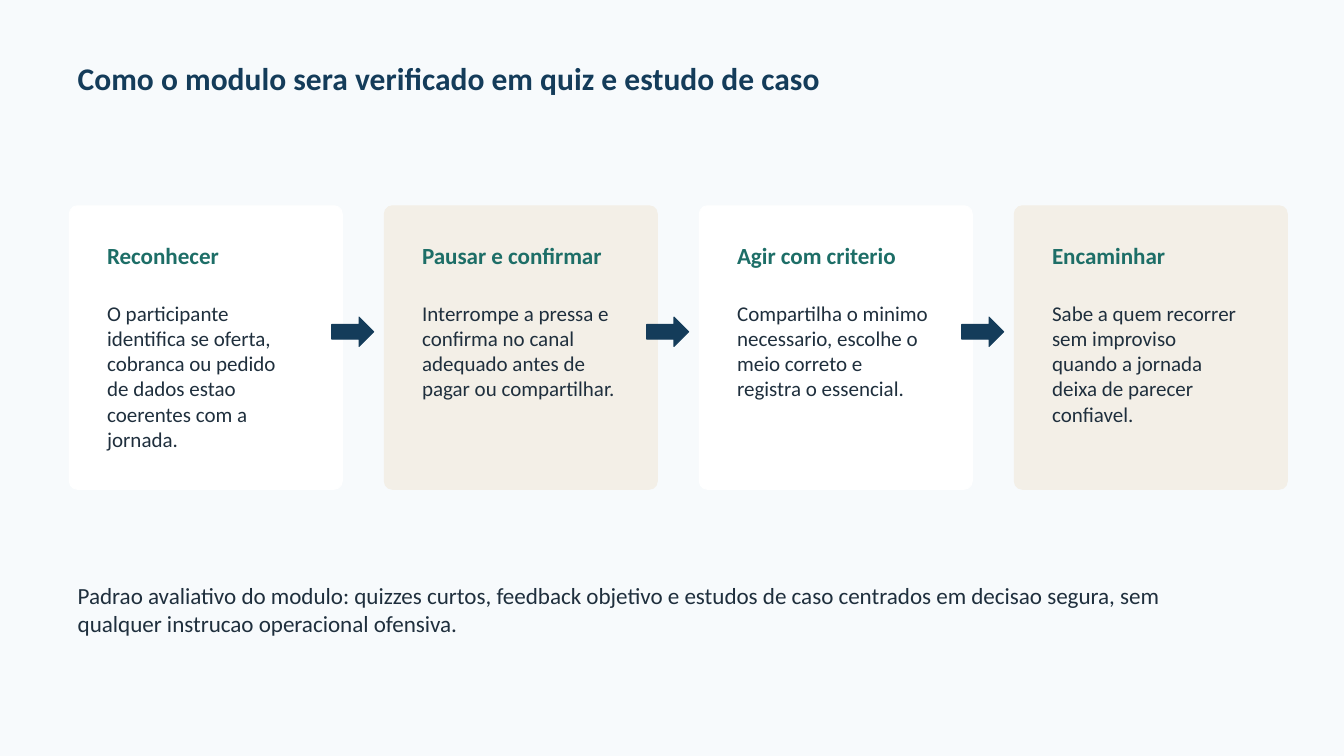
"""Build the slide on how the module is checked by quiz and case study."""
from pptx import Presentation
from pptx.dml.color import RGBColor as Rgb
from pptx.enum.shapes import MSO_SHAPE as Kind
from pptx.enum.text import MSO_ANCHOR as Anchor, MSO_AUTO_SIZE as Fit, PP_ALIGN as Align
from pptx.util import Pt

TITLE = "Como o modulo sera verificado em quiz e estudo de caso"
STEPS = [
    ("Reconhecer", "O participante identifica se oferta, cobranca ou pedido "
                   "de dados estao coerentes com a jornada."),
    ("Pausar e confirmar", "Interrompe a pressa e confirma no canal adequado "
                           "antes de pagar ou compartilhar."),
    ("Agir com criterio", "Compartilha o minimo necessario, escolhe o meio "
                          "correto e registra o essencial."),
    ("Encaminhar", "Sabe a quem recorrer sem improviso quando a jornada "
                   "deixa de parecer confiavel."),
]
NOTE = ("Padrao avaliativo do modulo: quizzes curtos, feedback objetivo e estudos "
        "de caso centrados em decisao segura, sem qualquer instrucao operacional ofensiva.")

COLORS = {"back": "F7FAFC", "navy": "143C5A", "teal": "1D6E67",
          "ink": "1F2F3D", "white": "FFFFFF", "sand": "F3EFE7"}
STYLES = {
    "title": {"size": 22.5, "bold": True, "color": "navy"},
    "head": {"size": 16.5, "bold": True, "color": "teal"},
    "body": {"size": 15, "bold": False, "color": "ink"},
    "note": {"size": 16.5, "bold": False, "color": "ink"},
}
FRAME = {"word_wrap": True, "auto_size": Fit.NONE, "vertical_anchor": Anchor.TOP,
         "margin_left": Pt(13.5), "margin_right": Pt(13.5),
         "margin_top": Pt(10.5), "margin_bottom": Pt(10.5)}
LEFT, TOP, WIDE, HIGH, PITCH = 49.5, 147, 195, 202.5, 225
PAD = 13.5


def tint(name):
    """Return the named colour."""
    return Rgb.from_string(COLORS[name])


def write(box, text, style):
    """Fill a box with one styled paragraph."""
    frame = box.text_frame
    for key, value in FRAME.items():
        setattr(frame, key, value)
    para = frame.paragraphs[0]
    para.text = text
    para.alignment = Align.LEFT
    look = STYLES[style]
    for key, value in {"name": "Calibri", "size": Pt(look["size"]),
                       "bold": look["bold"]}.items():
        setattr(para.font, key, value)
    para.font.color.rgb = tint(look["color"])


def label(slide, text, style, *rect):
    """Add a text box."""
    write(slide.shapes.add_textbox(*map(Pt, rect)), text, style)


def draw(slide, kind, color, *rect):
    """Add a flat shape in one colour."""
    shape = slide.shapes.add_shape(kind, *map(Pt, rect))
    shape.shadow.inherit = False
    shape.fill.solid()
    shape.fill.fore_color.rgb = tint(color)
    shape.line.color.rgb = tint(color)
    shape.line.width = Pt(0)
    return shape


def main():
    """Lay out the slide and save it."""
    deck = Presentation()
    deck.slide_width, deck.slide_height = Pt(960), Pt(540)
    slide = deck.slides.add_slide(deck.slide_layouts[5])
    slide.background.fill.solid()
    slide.background.fill.fore_color.rgb = tint("back")

    title = slide.shapes.title
    title.left, title.top, title.width, title.height = map(Pt, (42, 31.5, 645, 42))
    write(title, TITLE, "title")

    for i, (head, body) in enumerate(STEPS):
        x = LEFT + i * PITCH
        card = draw(slide, Kind.ROUNDED_RECTANGLE, ("white", "sand")[i % 2],
                    x, TOP, WIDE, HIGH)
        card.adjustments[0] = 0.03
        label(slide, head, "head", x + PAD, TOP + 15, 157.5, 31.5)
        label(slide, body, "body", x + PAD, TOP + 57, 165, 94.5)
        if i < len(STEPS) - 1:
            draw(slide, Kind.RIGHT_ARROW, "navy", x + 187.5, TOP + 79.5, 30, 21)

    label(slide, NOTE, "note", 42, 405, 840, 57)
    deck.save("out.pptx")


if __name__ == "__main__":
    main()
